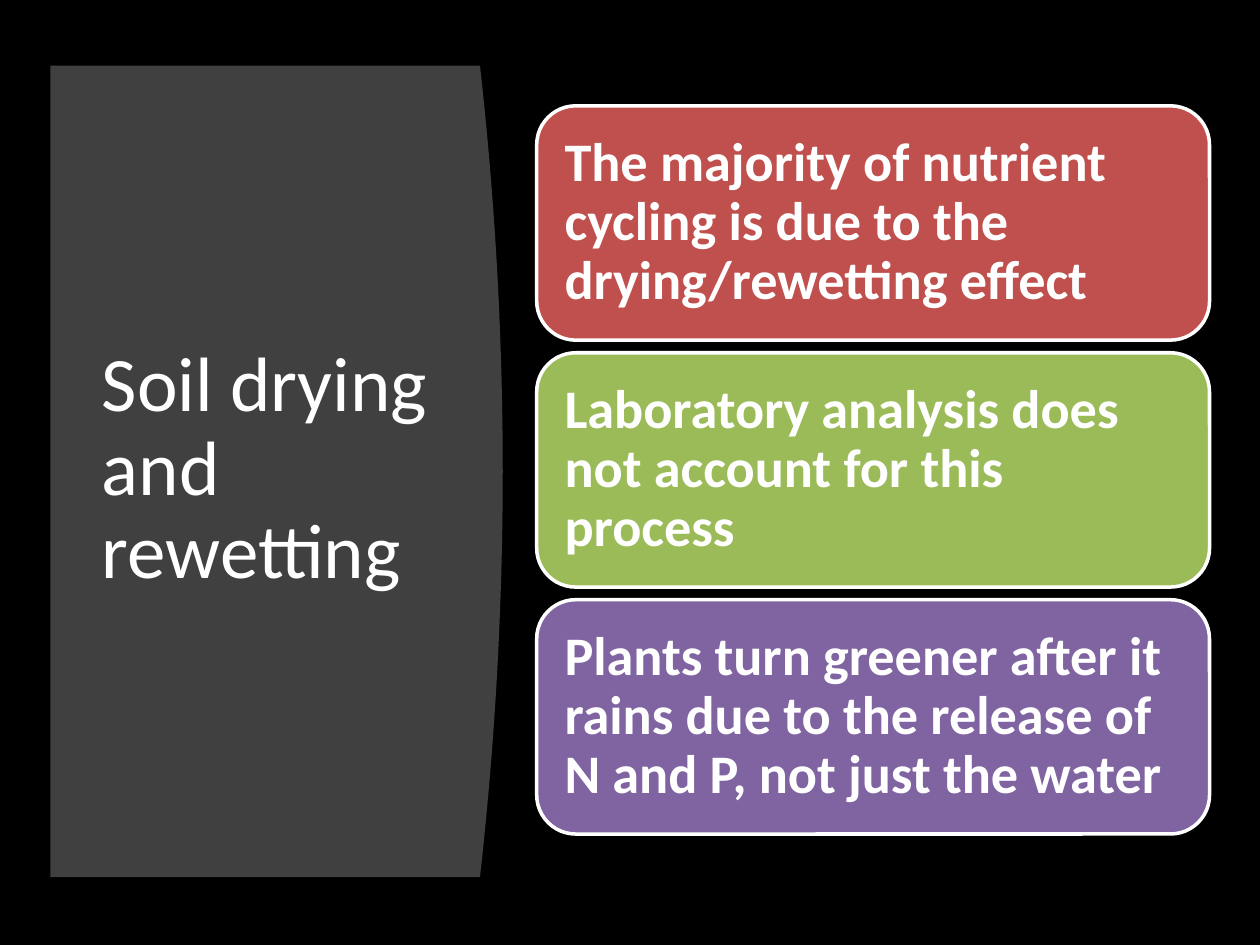
from pptx import Presentation
from pptx.dml.color import RGBColor
from pptx.enum.shapes import MSO_SHAPE
from pptx.enum.text import MSO_ANCHOR, PP_ALIGN
from pptx.util import Pt

BLACK = RGBColor(0x00, 0x00, 0x00)
WHITE = RGBColor(0xFF, 0xFF, 0xFF)
GRAY = RGBColor(0x40, 0x40, 0x40)
RED = RGBColor(0xC0, 0x50, 0x4D)
GREEN = RGBColor(0x9B, 0xBB, 0x59)
PURPLE = RGBColor(0x80, 0x64, 0xA2)

FONT = "Calibri"
TITLE = "Soil drying and rewetting"
STATEMENTS = [
    ("The majority of nutrient cycling is due to the drying/rewetting effect", RED),
    ("Laboratory analysis does not account for this process", GREEN),
    ("Plants turn greener after it rains due to the release of N and P, "
     "not just the water", PURPLE),
]

PANEL_LEFT, PANEL_TOP, PANEL_RIGHT, PANEL_BOTTOM = 28.8, 37.5, 274.3, 501.2
PANEL_BULGE = 13
CURVE_STEPS = 40

CARD_LEFT, CARD_TOP, CARD_WIDTH, CARD_HEIGHT = 306.7, 60.5, 384.5, 133.9
CARD_GAP = 7.2
CARD_INSET = 9.4


def write_text(frame, text, size, bold=False):
    frame.word_wrap = True
    frame.vertical_anchor = MSO_ANCHOR.MIDDLE
    frame.text = text
    paragraph = frame.paragraphs[0]
    paragraph.alignment = PP_ALIGN.LEFT
    paragraph.line_spacing = 0.9
    font = paragraph.runs[0].font
    font.name = FONT
    font.size = Pt(size)
    font.bold = bold
    font.color.rgb = WHITE


def add_panel(slide):
    """Draw the gray panel whose right side bulges along a parabola."""
    curve = []
    for step in range(CURVE_STEPS + 1):
        share = step / CURVE_STEPS
        x = PANEL_RIGHT + PANEL_BULGE * 4 * share * (1 - share)
        y = PANEL_TOP + (PANEL_BOTTOM - PANEL_TOP) * share
        curve.append((Pt(x), Pt(y)))
    builder = slide.shapes.build_freeform(Pt(PANEL_LEFT), Pt(PANEL_TOP))
    builder.add_line_segments(curve + [(Pt(PANEL_LEFT), Pt(PANEL_BOTTOM))])
    panel = builder.convert_to_shape()
    panel.shadow.inherit = False
    panel.fill.solid()
    panel.fill.fore_color.rgb = GRAY
    panel.line.fill.background()


def add_title(slide):
    title = slide.shapes.add_textbox(Pt(51.1), Pt(80), Pt(201.6), Pt(377.3))
    write_text(title.text_frame, TITLE, 44)


def add_card(slide, top, statement, color):
    card = slide.shapes.add_shape(
        MSO_SHAPE.ROUNDED_RECTANGLE,
        Pt(CARD_LEFT), Pt(top), Pt(CARD_WIDTH), Pt(CARD_HEIGHT))
    card.shadow.inherit = False
    card.fill.solid()
    card.fill.fore_color.rgb = color
    card.line.color.rgb = WHITE
    card.line.width = Pt(2)
    frame = card.text_frame
    frame.margin_left = frame.margin_right = Pt(CARD_INSET)
    frame.margin_top = frame.margin_bottom = Pt(CARD_INSET)
    write_text(frame, statement, 31, bold=True)


def main():
    prs = Presentation()
    prs.slide_width, prs.slide_height = Pt(720), Pt(540)
    slide = prs.slides.add_slide(prs.slide_layouts[6])
    slide.background.fill.solid()
    slide.background.fill.fore_color.rgb = BLACK

    add_panel(slide)
    add_title(slide)
    for row, (statement, color) in enumerate(STATEMENTS):
        add_card(slide, CARD_TOP + row * (CARD_HEIGHT + CARD_GAP), statement, color)

    prs.save("out.pptx")


if __name__ == "__main__":
    main()
